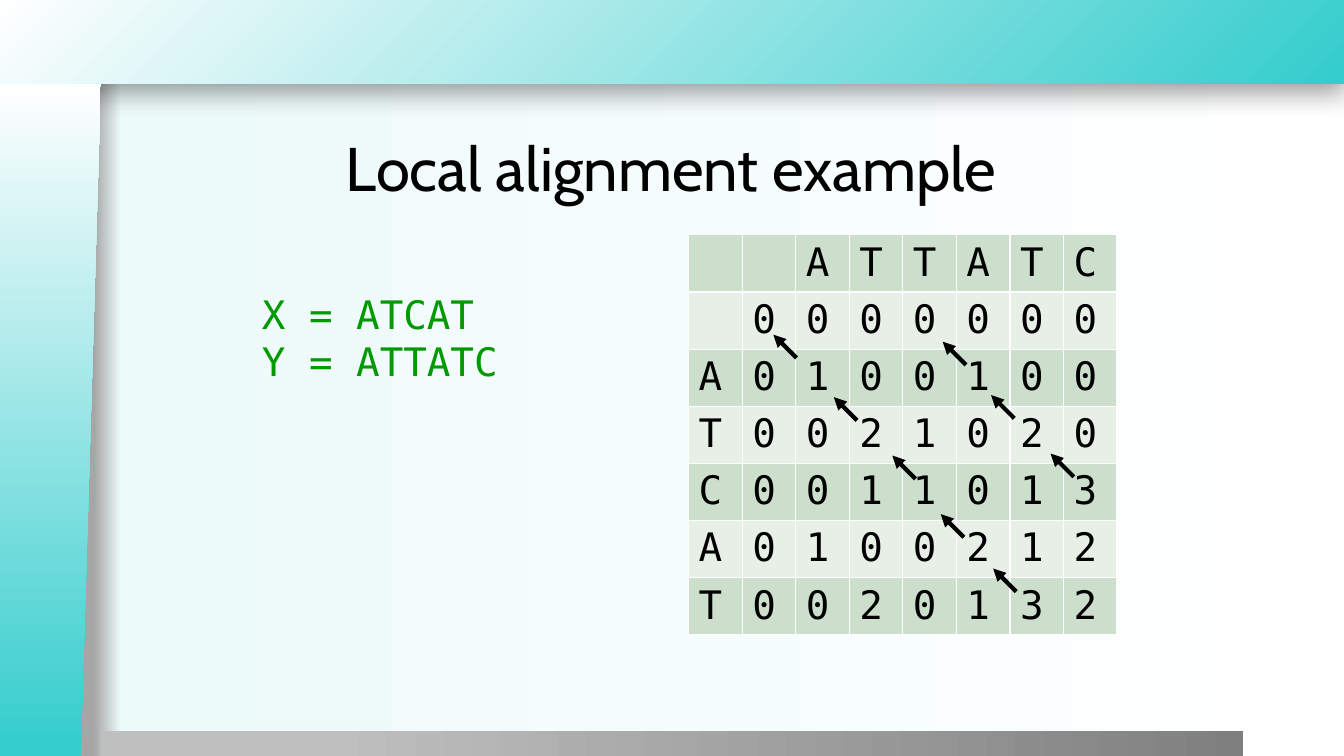
from lxml.etree import SubElement
from pptx import Presentation
from pptx.dml.color import RGBColor
from pptx.enum.shapes import MSO_CONNECTOR, MSO_SHAPE
from pptx.enum.text import MSO_ANCHOR, PP_ALIGN
from pptx.oxml import parse_xml
from pptx.oxml.ns import nsdecls, qn
from pptx.util import Inches, Pt

HUES = {
    "ink": "000000", "green": "009900", "teal": "34CCCC", "white": "FFFFFF",
    "mist": "EDFBFB", "edge": "A6A6A6", "silver": "BFBFBF", "grey": "7F7F7F",
    "dark": "CCDECC", "light": "E7EFE7",
}
LINEAR = '<a:lin ang="0" scaled="0"/>'
CORNER = '<a:path path="circle"><a:fillToRect l="100000" t="100000"/></a:path>'
SHADOW = (
    f'<a:effectLst {nsdecls("a")}><a:outerShdw blurRad="{Inches(0.28)}" '
    f'dist="{Inches(0.08)}" dir="5400000" algn="t" rotWithShape="0">'
    '<a:srgbClr val="000000"><a:alpha val="40000"/></a:srgbClr>'
    "</a:outerShdw></a:effectLst>"
)

GRID = [
    "  ATTATC",
    " 0000000",
    "A0100100",
    "T0021020",
    "C0011013",
    "A0100212",
    "T0020132",
]
STEP = 0.23
TIPS = [
    (10.42, 4.5), (9.83, 3.92), (9.35, 3.39),
    (9.85, 5.64), (9.33, 5.1), (8.85, 4.52), (8.27, 3.94), (7.67, 3.32),
]


def color(name):
    return RGBColor.from_string(HUES[name])


class Deck:
    head, mono = "Cabin", "DejaVu Sans Mono"

    def __init__(self):
        self.prs = Presentation()
        self.prs.slide_width = Inches(13.33)
        self.prs.slide_height = Inches(7.5)
        self.slide = self.prs.slides.add_slide(self.prs.slide_layouts[5])
        self.shapes = self.slide.shapes

    def blend(self, fill, root, stops, way=LINEAR):
        """Give a fill found under root its own gradient stops and direction."""
        fill.gradient()
        old = root.find(".//" + qn("a:gradFill"))
        marks = "".join(
            f'<a:gs pos="{at * 1000}"><a:srgbClr val="{HUES[name]}"/></a:gs>'
            for at, name in stops
        )
        new = parse_xml(
            f'<a:gradFill {nsdecls("a")} rotWithShape="1">'
            f"<a:gsLst>{marks}</a:gsLst>{way}</a:gradFill>"
        )
        old.getparent().replace(old, new)

    def back(self, stops):
        self.blend(self.slide.background.fill, self.slide._element.cSld, stops)

    def band(self, kind, box, stops, way=LINEAR):
        shape = self.shapes.add_shape(kind, *map(Inches, box))
        self.blend(shape.fill, shape._element.spPr, stops, way)
        shape.line.fill.background()
        shape.shadow.inherit = False
        return shape

    def run(self, para, text, size, face, hue):
        run = para.add_run()
        run.text = text
        run.font.size = Pt(size)
        run.font.name = face
        run.font.color.rgb = color(hue)

    def title(self, text, box):
        shape = self.shapes.title
        shape.left, shape.top, shape.width, shape.height = map(Inches, box)
        shape.text_frame.vertical_anchor = MSO_ANCHOR.MIDDLE
        para = shape.text_frame.paragraphs[0]
        para.alignment = PP_ALIGN.LEFT
        self.run(para, text, 44, self.head, "ink")

    def text(self, lines, box):
        frame = self.shapes.add_textbox(*map(Inches, box)).text_frame
        frame.word_wrap = True
        for i, line in enumerate(lines):
            para = frame.add_paragraph() if i else frame.paragraphs[0]
            self.run(para, line, 28, self.mono, "green")

    def table(self, rows, box):
        size = len(rows), len(rows[0])
        table = self.shapes.add_table(*size, *map(Inches, box)).table
        table.first_row = table.horz_banding = False
        for r, row in enumerate(rows):
            for c, mark in enumerate(row):
                cell = table.cell(r, c)
                cell.fill.solid()
                cell.fill.fore_color.rgb = color("light" if r % 2 else "dark")
                if mark.strip():
                    para = cell.text_frame.paragraphs[0]
                    self.run(para, mark, 28, self.mono, "ink")

    def arrow(self, x, y):
        """Draw a short diagonal arrow whose tip is at x, y."""
        ends = map(Inches, (x + STEP, y + STEP, x, y))
        link = self.shapes.add_connector(MSO_CONNECTOR.STRAIGHT, *ends)
        link.line.color.rgb = color("ink")
        link.line.width = Pt(3)
        SubElement(link.line._get_or_add_ln(), qn("a:tailEnd"), type="triangle")
        SubElement(link._element.spPr, qn("a:effectLst"))


def main():
    deck = Deck()
    deck.back([(0, "edge"), (7, "edge"), (9, "mist"), (100, "white")])
    top = deck.band(MSO_SHAPE.RECTANGLE, (-0.01, 0, 13.34, 0.83),
                    [(0, "teal"), (100, "white")], CORNER)
    props = top._element.spPr
    props.replace(props.find(qn("a:effectLst")), parse_xml(SHADOW))
    deck.band(MSO_SHAPE.RECTANGLE, (1, 7.25, 11.33, 0.26),
              [(20, "silver"), (100, "grey")])
    side = deck.band(MSO_SHAPE.FLOWCHART_MANUAL_INPUT, (-2.84, 3.67, 6.68, 1),
                     [(1, "teal"), (100, "white")])
    side.rotation = 270
    side._element.spPr.find(qn("a:xfrm")).set("flipV", "1")

    deck.title("Local alignment example", (3.33, 1.25, 8.17, 0.81))
    deck.table(GRID, (6.83, 2.33, 4.25, 3.97))
    for tip in TIPS:
        deck.arrow(*tip)
    deck.text(["X = ATCAT", "Y = ATTATC"], (2.5, 2.83, 3.25, 1.31))
    deck.prs.save("out.pptx")


if __name__ == "__main__":
    main()
